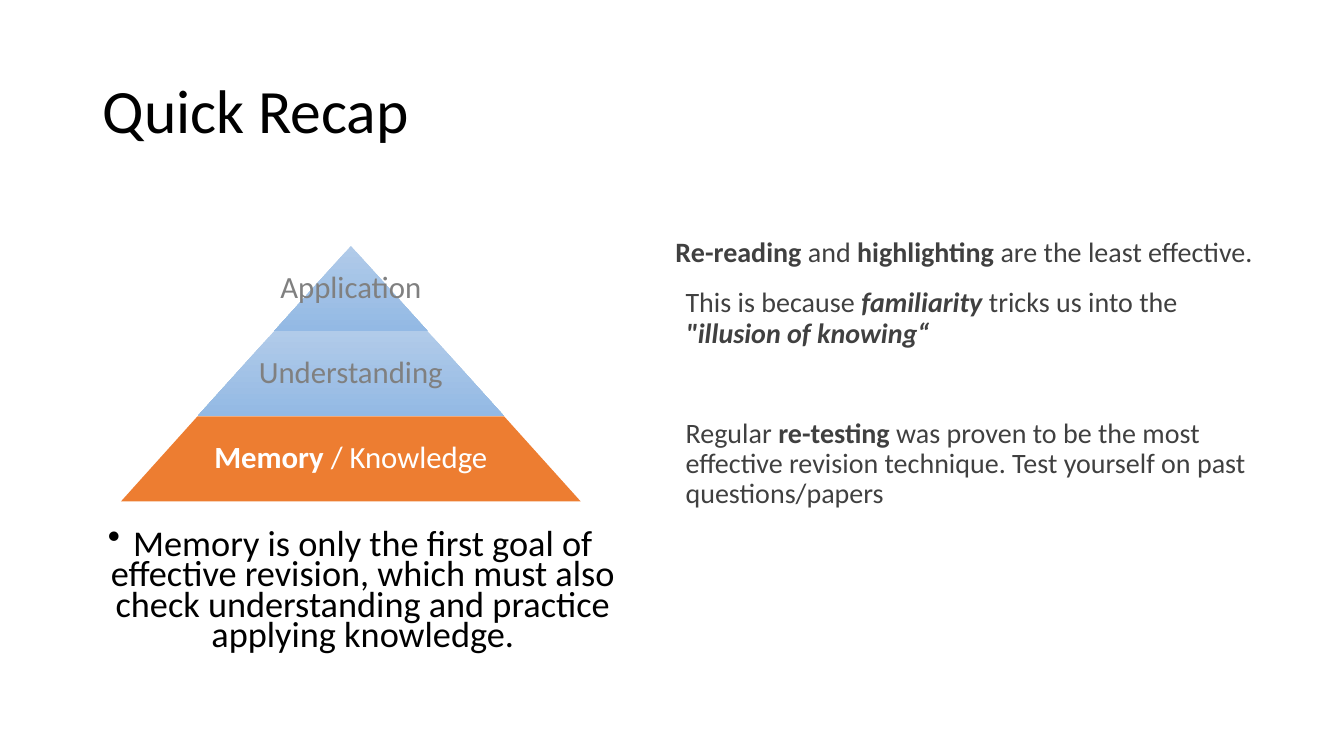
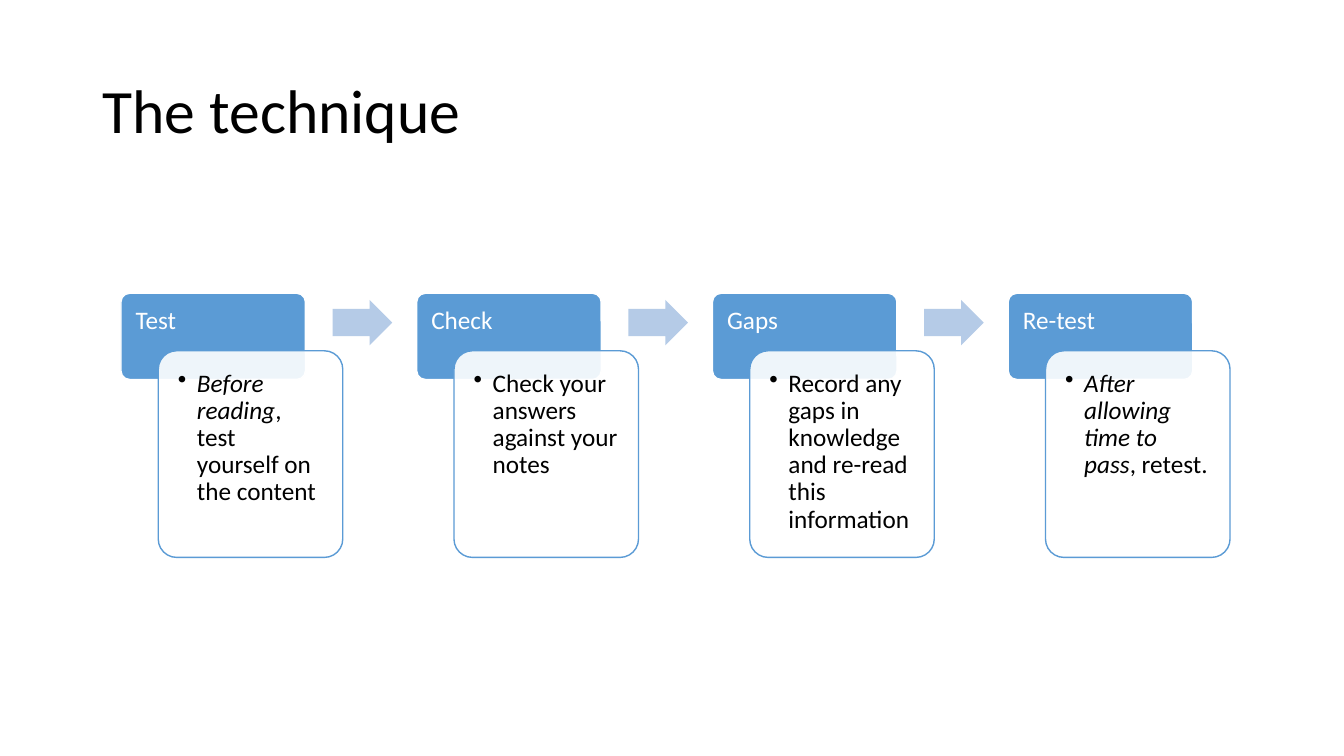
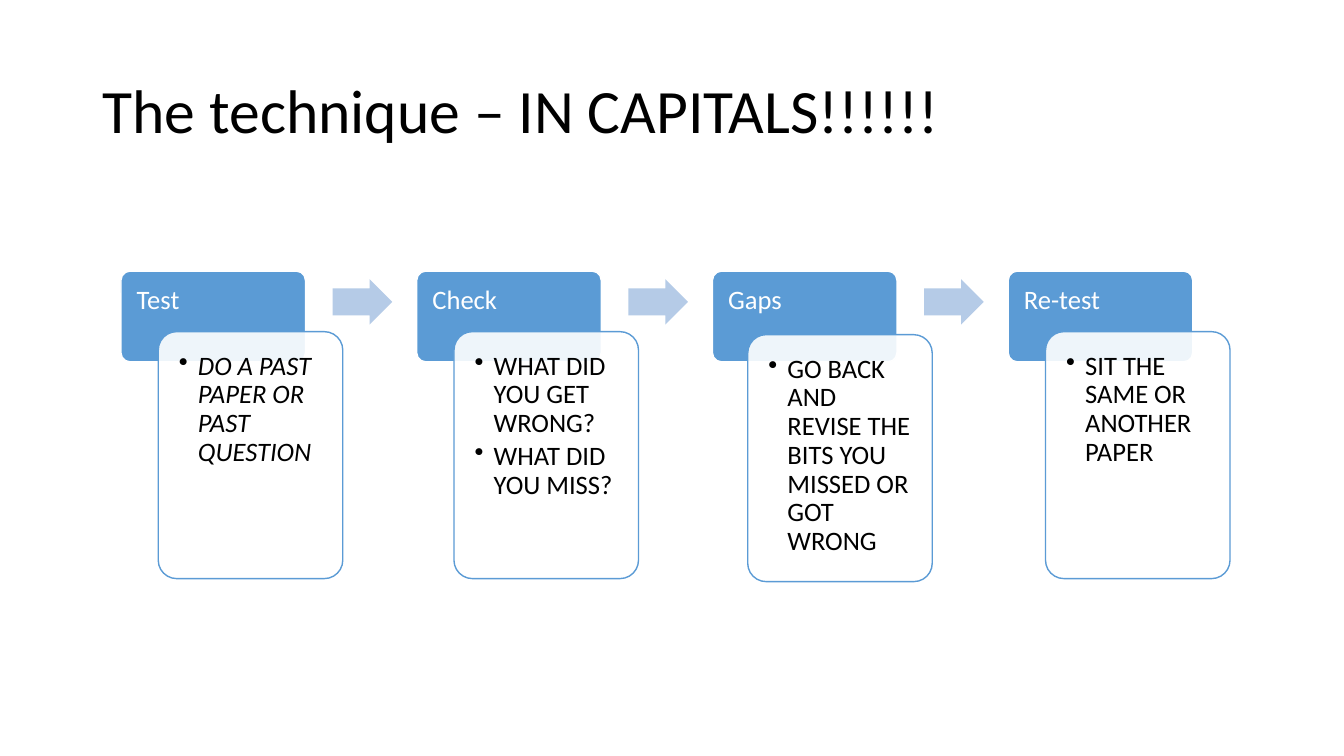
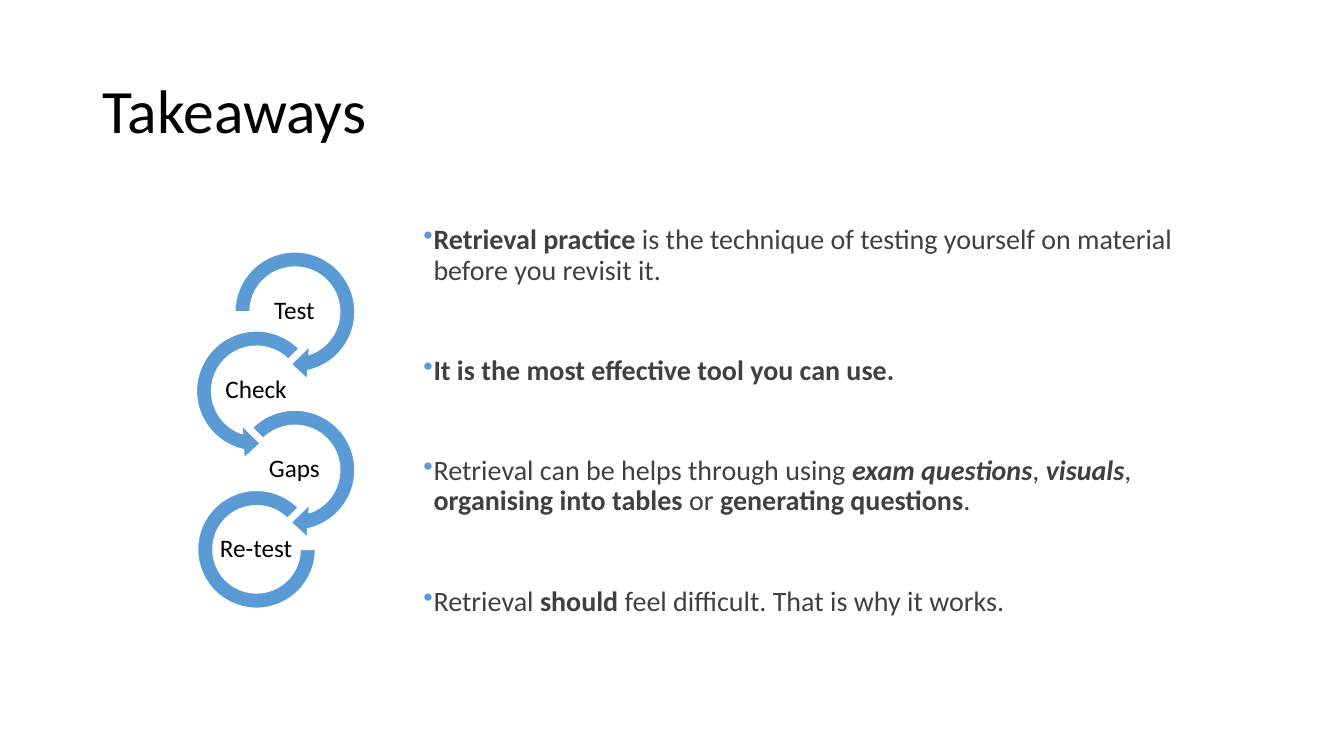
from lxml import etree
from pptx import Presentation
from pptx import util as u
from pptx.dml.color import RGBColor
from pptx.enum import shapes, text
from pptx.oxml.ns import qn

FONT = "Calibri"
BLACK, WHITE, GREY, DARK = "000000", "FFFFFF", "808080", "404040"
BLUE, PALE_BLUE, ORANGE = "5B9BD5", "B5CBE7", "ED7D31"
PYRAMID_TOP, PYRAMID_BOTTOM = "B1CBE9", "93B9E4"

SHAPE = shapes.MSO_SHAPE
CENTER = text.PP_ALIGN.CENTER
TOP, MIDDLE = text.MSO_ANCHOR.TOP, text.MSO_ANCHOR.MIDDLE

# A paragraph is a list of (words, style); style holds "b" for bold, "i" for italic.
LEVELS = [
    ([("Application", "")], GREY),
    ([("Understanding", "")], GREY),
    ([("Memory", "b"), (" / Knowledge", "")], WHITE),
]
GOAL = [("Memory is only the first goal of effective revision, which must also "
         "check understanding and practice applying knowledge.", "")]
# Each finding: space before in points, left margin, runs.
FINDINGS = [
    (12, 0, [("Re-reading", "b"), (" and ", ""), ("highlighting ", "b"),
             ("are the least effective.", "")]),
    (12, 0.1, [("This is because ", ""), ("familiarity ", "bi"),
               ("tricks us into the ", ""), ('"illusion of knowing“', "bi")]),
    (48, 0.1, [("Regular ", ""), ("re-testing", "b"),
               (" was proven to be the most effective revision technique. "
                "Test yourself on past questions/papers", "")]),
]

STEPS = ["Test", "Check", "Gaps", "Re-test"]
TECHNIQUE = [
    [[("Before reading", "i"), (", test yourself on the content", "")]],
    [[("Check your answers against your notes", "")]],
    [[("Record any gaps in knowledge and re-read this information", "")]],
    [[("After allowing time to pass", "i"), (", retest.", "")]],
]
IN_CAPITALS = [
    [[("DO A PAST PAPER OR PAST QUESTION", "i")]],
    [[("WHAT DID YOU GET WRONG?", "")], [("WHAT DID YOU MISS?", "")]],
    [[("GO BACK AND REVISE THE BITS YOU MISSED OR GOT WRONG", "")]],
    [[("SIT THE SAME OR ANOTHER PAPER", "")]],
]

TAKEAWAYS = [
    [("Retrieval practice", "b"),
     (" is the technique of testing yourself on material before you revisit it.", "")],
    [("It is the most effective tool you can use.", "b")],
    [("Retrieval can be helps through using ", ""), ("exam questions", "bi"), (", ", ""),
     ("visuals", "bi"), (", ", ""), ("organising into tables ", "b"), ("or ", ""),
     ("generating questions", "b"), (".", "")],
    [("Retrieval ", ""), ("should ", "b"), ("feel difficult. That is why it works.", "")],
]
LOOPS = [
    (SHAPE.CIRCULAR_ARROW, (0.11, 11.42, 45, 108, 0.12)),
    (SHAPE.LEFT_CIRCULAR_ARROW, (0.11, 11.42, 63, 189, 0.12)),
    (SHAPE.CIRCULAR_ARROW, (0.11, 11.42, 45, 135, 0.12)),
    (SHAPE.BLOCK_ARC, (0, 189, 0.13)),
]


def rgb(color):
    return RGBColor.from_string(color)


def inches(*lengths):
    return [u.Inches(length) for length in lengths]


def set_up(frame, insets=(0.1, 0.05, 0.1, 0.05), anchor=TOP):
    frame.word_wrap = True
    frame.vertical_anchor = anchor
    (frame.margin_left, frame.margin_top,
     frame.margin_right, frame.margin_bottom) = inches(*insets)


def write(frame, runs, size, color=BLACK, align=text.PP_ALIGN.LEFT, spacing=0.9,
          before=0, after=0, margin=0, bullet=None):
    """Add a paragraph; bullet is the colour of a hanging bullet, if any."""
    p = frame.paragraphs[0]
    if p.runs:
        p = frame.add_paragraph()
    p.alignment, p.line_spacing = align, spacing
    p.space_before, p.space_after = u.Pt(before), u.Pt(after)
    p.font.name, p.font.size = FONT, u.Pt(size)
    p.font.color.rgb = rgb(color)
    for words, style in runs:
        run = p.add_run()
        run.text = words
        if "b" in style:
            run.font.bold = True
        if "i" in style:
            run.font.italic = True
    properties = p._p.get_or_add_pPr()
    properties.set("marL", str(u.Inches(margin)))
    properties.set("indent", str(-u.Inches(margin) if bullet else 0))
    if bullet:
        bullet_color = etree.Element(qn("a:buClr"))
        etree.SubElement(bullet_color, qn("a:srgbClr"), val=bullet)
        defaults = properties.find(qn("a:defRPr"))
        defaults.addprevious(bullet_color)
        defaults.addprevious(etree.Element(qn("a:buChar"), char="•"))


def add_text(slide, box, **setup):
    frame = slide.shapes.add_textbox(*inches(*box)).text_frame
    set_up(frame, **setup)
    return frame


def add_shape(slide, kind, box, fill, line=None, adjust=()):
    shape = slide.shapes.add_shape(kind, *inches(*box))
    shape.shadow.inherit = False
    for i, value in enumerate(adjust):
        shape.adjustments[i] = value
    shape.fill.solid()
    shape.fill.fore_color.rgb = rgb(fill)
    if line:
        shape.line.color.rgb = rgb(line)
        shape.line.width = u.Pt(1)
    else:
        shape.line.fill.background()
    return shape


def add_slide(deck, title):
    slide = deck.slides.add_slide(deck.slide_layouts[6])
    frame = add_text(slide, (0.92, 0.4, 11.5, 1.45), anchor=MIDDLE)
    write(frame, [(title, "")], 44)
    return slide


def add_pyramid(slide):
    center, top, height, half_step = 3.48, 2.44, 0.845, 0.76
    for i, (label, color) in enumerate(LEVELS):
        half, y = half_step * (i + 1), top + height * i
        level = add_shape(slide, SHAPE.TRAPEZOID, (center - half, y, 2 * half, height),
                          ORANGE, adjust=[half_step / height])
        if i < len(LEVELS) - 1:
            level.fill.gradient()
            level.fill.gradient_angle = 270
            for stop, shade in zip(level.fill.gradient_stops, (PYRAMID_TOP, PYRAMID_BOTTOM)):
                stop.color.rgb = rgb(shade)
        frame = add_text(slide, (center - 1.5, y, 3, height), insets=[0.03] * 4, anchor=MIDDLE)
        write(frame, label, 22, color, CENTER)


def add_process(slide, cards, top, band, card_height, size, inset, nudges=None):
    """Draw the four steps; nudges maps a step to the shift of its card."""
    left, pitch, width = 1.2, 8.8 / 3, 1.83
    for i, (step, points) in enumerate(zip(STEPS, cards)):
        x = left + pitch * i
        header = add_shape(slide, SHAPE.ROUNDED_RECTANGLE, (x, top, width, band * 1.5),
                           BLUE, WHITE, [0.1])
        edge = inset - 0.02
        set_up(header.text_frame, (edge, edge, edge, edge / 2))
        write(header.text_frame, [(step, "")], size, WHITE)

        dx, dy = (nudges or {}).get(step, (0, 0))
        card = add_shape(slide, SHAPE.ROUNDED_RECTANGLE,
                         (x + 0.37 + dx, top + band + dy, width, card_height),
                         WHITE, BLUE, [0.1])
        fill_color = card._element.spPr.find(qn("a:solidFill"))[0]
        etree.SubElement(fill_color, qn("a:alpha"), val="90000")
        set_up(card.text_frame, [inset] * 4)
        for point in points:
            write(card.text_frame, point, size, after=3, margin=0.19, bullet=BLACK)

        if i < len(STEPS) - 1:
            add_shape(slide, SHAPE.RIGHT_ARROW, (x + 2.1, top + band / 2 - 0.22, 0.59, 0.45),
                      PALE_BLUE, adjust=[0.6, 0.5])


def add_cycle(slide):
    top, pitch = 2.41, 0.785
    for i, (step, (kind, adjust)) in enumerate(zip(STEPS, LOOPS)):
        x, y = (2.24, 1.86)[i % 2], top + pitch * i
        inner = 0.1 if kind == SHAPE.BLOCK_ARC else 0
        side = 1.37 - 2 * inner
        add_shape(slide, kind, (x + inner, y + inner, side, side), BLUE, WHITE, adjust)
        frame = add_text(slide, (x + 0.3, y + 0.49, 0.76, 0.38),
                         insets=[0.01] * 4, anchor=MIDDLE)
        write(frame, [(step, "")], 18, align=CENTER)


def main():
    deck = Presentation()
    deck.slide_width, deck.slide_height = inches(13.33, 7.5)
    flush = (0, 0.05, 0, 0.05)

    recap = add_slide(deck, "Quick Recap")
    goal = add_text(recap, (0.61, 5.23, 5.73, 1.35))
    write(goal, GOAL, 25.9, align=CENTER, spacing=0.7, before=10, margin=0.25, bullet=BLACK)
    add_pyramid(recap)
    findings = add_text(recap, (6.7, 2.32, 5.73, 4.4), insets=flush)
    for before, margin, runs in FINDINGS:
        write(findings, runs, 20, DARK, before=before, after=2, margin=margin)

    technique = add_slide(deck, "The technique")
    add_process(technique, TECHNIQUE, 2.91, 0.57, 2.05, 18, 0.14)

    capitals = add_slide(deck, "The technique – IN CAPITALS!!!!!!")
    add_process(capitals, IN_CAPITALS, 2.69, 0.6, 2.45, 19, 0.15, {"Gaps": (-0.02, 0.03)})

    closing = add_slide(deck, "Takeaways")
    add_cycle(closing)
    takeaways = add_text(closing, (4.2, 2.19, 8.17, 4.4), insets=flush)
    for i, runs in enumerate(TAKEAWAYS):
        write(takeaways, runs, 20, DARK, before=48 if i else 12, after=2,
              margin=0.1, bullet=BLUE)

    deck.save("out.pptx")


if __name__ == "__main__":
    main()
